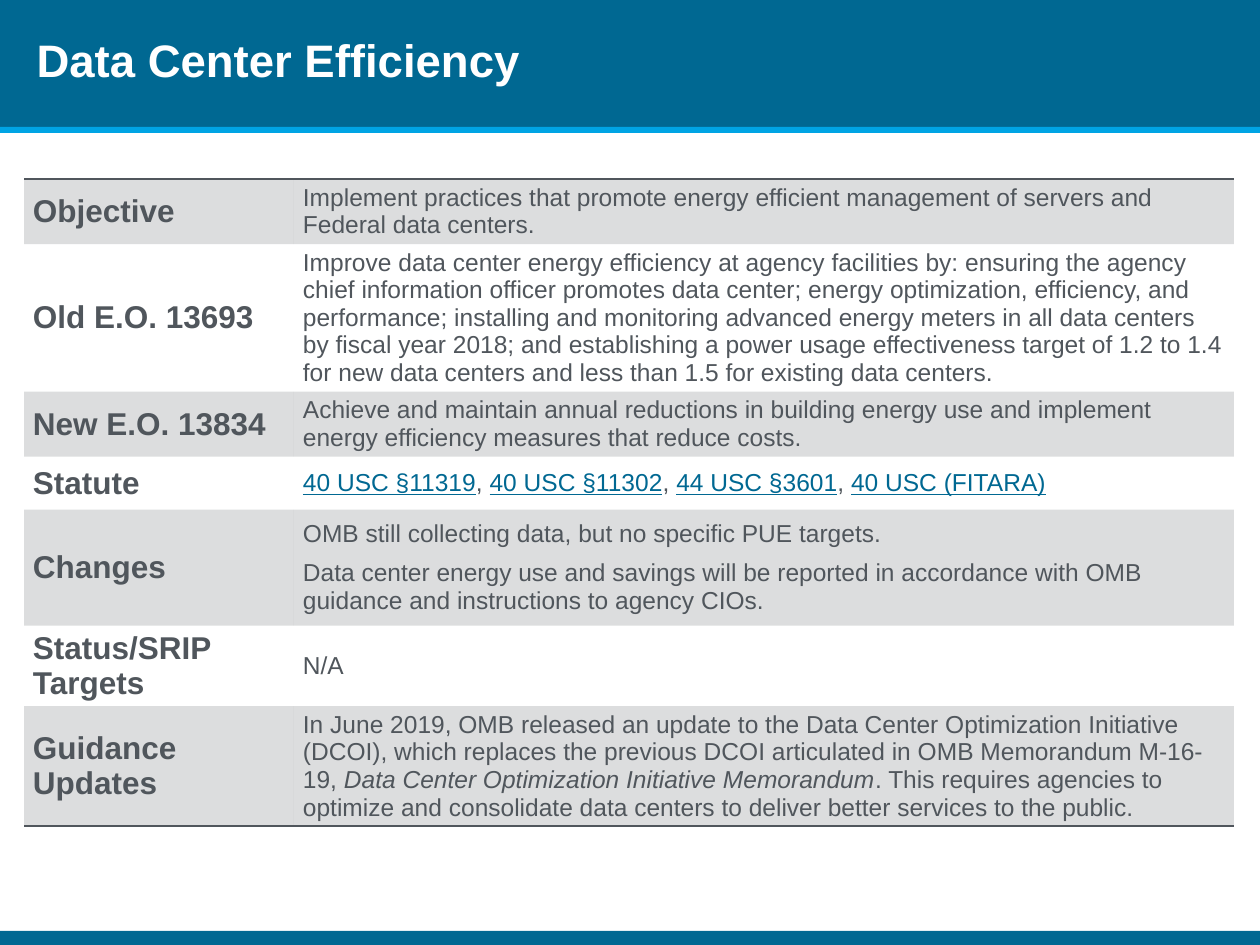
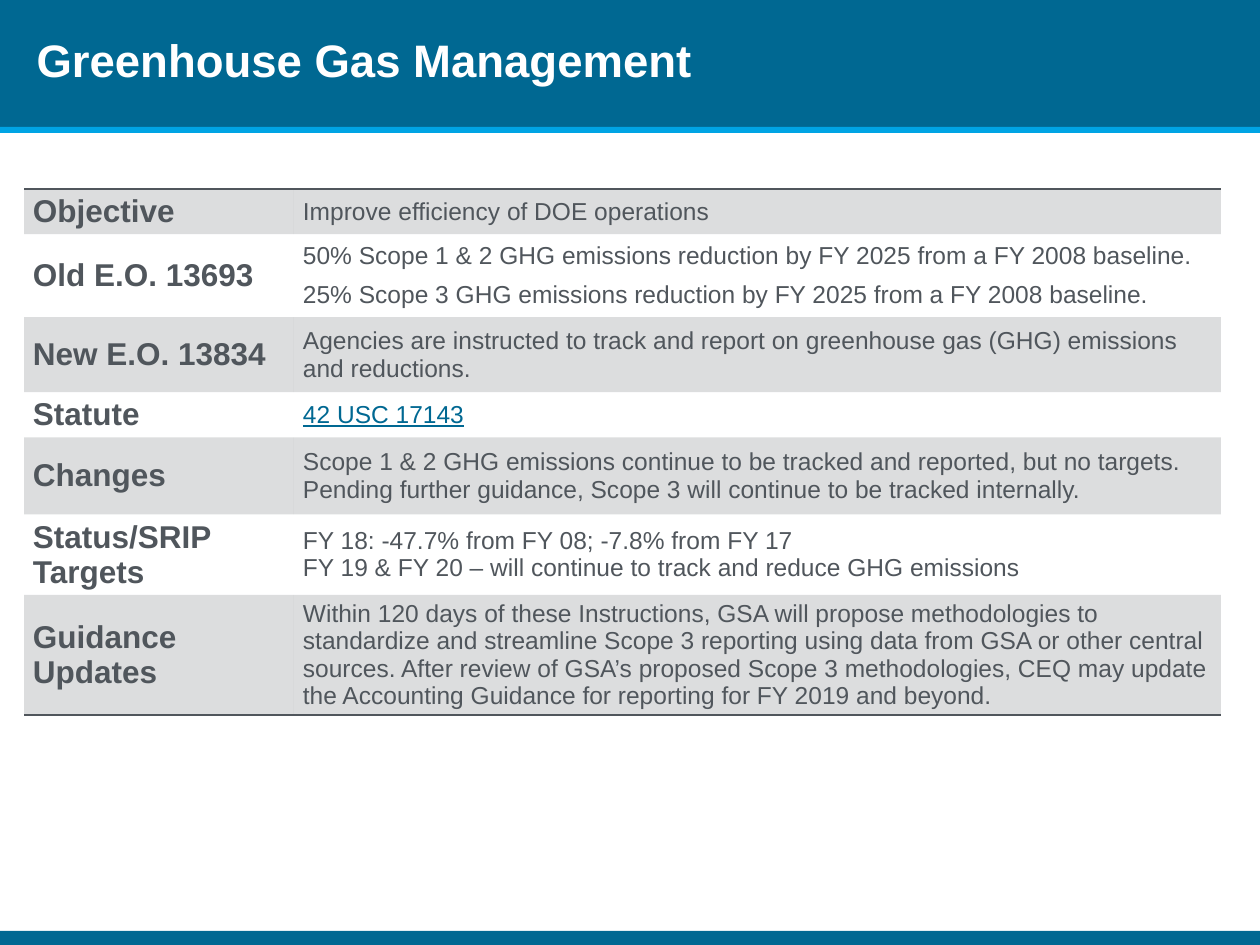
from dataclasses import dataclass
from typing import NamedTuple

import pptx
import pptx.dml.color
import pptx.enum.shapes
import pptx.enum.text
import pptx.oxml
import pptx.oxml.ns
import pptx.util
from lxml import etree

RGB = pptx.dml.color.RGBColor
Pt = pptx.util.Pt
qn = pptx.oxml.ns.qn

BLUE = RGB(0x00, 0x68, 0x92)
SKY = RGB(0x00, 0xA4, 0xE4)
GREY = RGB(0x50, 0x56, 0x5C)
WHITE = RGB(0xFF, 0xFF, 0xFF)

FONT = "Arial"
WIDE, HIGH = 1260, 945
LEFT = 24
LABEL = 270
PLAIN_GRID = "{2D5ABB26-0587-4C30-8999-92F81FD0307C}"


class Band(NamedTuple):
    top: int
    high: int
    fill: RGB


class Bit(NamedTuple):
    text: str
    link: bool = False
    slant: bool = False


@dataclass
class Row:
    label: str
    high: int
    paras: list[list[Bit]]
    gap: float = 0


@dataclass
class Page:
    title: str
    top: int
    wide: int
    rows: list[Row]


BANDS = [Band(0, 127, BLUE), Band(931, 14, BLUE), Band(127, 6, SKY)]


def px(count: int) -> int:
    return round(count * 914400 / 126)


def plain(*lines: str) -> list[list[Bit]]:
    """Paragraphs of one unstyled run each."""
    return [[Bit(line)] for line in lines]


def links(*names: str) -> list[list[Bit]]:
    """One paragraph of link-styled names, parted by commas."""
    bits = [Bit(names[0], link=True)]
    for name in names[1:]:
        bits += [Bit(", "), Bit(name, link=True)]
    return [bits]


PAGES = [
    Page("Data Center Efficiency", 179, 940, [
        Row("Objective", 64, plain(
            "Implement practices that promote energy efficient management of "
            "servers and Federal data centers.")),
        Row("Old E.O. 13693", 147, plain(
            "Improve data center energy efficiency at agency facilities by: "
            "ensuring the agency chief information officer promotes data center; "
            "energy optimization, efficiency, and performance; installing and "
            "monitoring advanced energy meters in all data centers by fiscal year "
            "2018; and establishing a power usage effectiveness target of 1.2 to "
            "1.4 for new data centers and less than 1.5 for existing data centers.")),
        Row("New E.O. 13834", 65, plain(
            "Achieve and maintain annual reductions in building energy use and "
            "implement energy efficiency measures that reduce costs.")),
        Row("Statute", 53, links("40 USC §11319", "40 USC §11302",
                                 "44 USC §3601", "40 USC (FITARA)")),
        Row("Changes", 116, plain(
            "OMB still collecting data, but no specific PUE targets.",
            "Data center energy use and savings will be reported in accordance "
            "with OMB guidance and instructions to agency CIOs."), 6.5),
        Row("Status/SRIP Targets", 80, plain("N/A")),
        Row("Guidance Updates", 120, [[
            Bit("In June 2019, OMB released an update to the Data Center "
                "Optimization Initiative (DCOI), which replaces the previous DCOI "
                "articulated in OMB Memorandum M-16-19, "),
            Bit("Data Center Optimization Initiative Memorandum", slant=True),
            Bit(". This requires agencies to optimize and consolidate data centers "
                "to deliver better services to the public.")]]),
    ]),
    Page("Greenhouse Gas Management", 189, 927, [
        Row("Objective", 45, plain("Improve efficiency of DOE operations")),
        Row("Old E.O. 13693", 83, plain(
            "50% Scope 1 & 2 GHG emissions reduction by FY 2025 from a FY 2008 baseline.",
            "25% Scope 3 GHG emissions reduction by FY 2025 from a FY 2008 baseline."),
            6.5),
        Row("New E.O. 13834", 75, plain(
            "Agencies are instructed to track and report on greenhouse gas (GHG) "
            "emissions and reductions.")),
        Row("Statute", 45, links("42 USC 17143")),
        Row("Changes", 77, plain(
            "Scope 1 & 2 GHG emissions continue to be tracked and reported, but no targets.",
            "Pending further guidance, Scope 3 will continue to be tracked internally.")),
        Row("Status/SRIP Targets", 80, plain(
            "FY 18: -47.7% from FY 08; -7.8% from FY 17",
            "FY 19 & FY 20 – will continue to track and reduce GHG emissions")),
        Row("Guidance Updates", 120, plain(
            "Within 120 days of these Instructions, GSA will propose methodologies "
            "to standardize and streamline Scope 3 reporting using data from GSA or "
            "other central sources. After review of GSA’s proposed Scope 3 "
            "methodologies, CEQ may update the Accounting Guidance for reporting "
            "for FY 2019 and beyond.")),
    ]),
]


def style(font, size: int, color: RGB, bold: bool = False) -> None:
    font.name, font.size, font.bold = FONT, Pt(size), bold
    font.color.rgb = color


def draw_band(slide, band: Band) -> None:
    shape = slide.shapes.add_shape(
        pptx.enum.shapes.MSO_SHAPE.RECTANGLE,
        0, px(band.top), px(WIDE), px(band.high))
    shape.shadow.inherit = False
    shape.fill.solid()
    shape.fill.fore_color.rgb = band.fill
    shape.line.fill.background()


def draw_title(slide, text: str) -> None:
    title = slide.shapes.title
    title.left, title.top, title.width, title.height = (
        px(LEFT), 0, px(780), px(125))
    frame = title.text_frame
    frame.text = text
    frame.word_wrap = True
    frame.auto_size = pptx.enum.text.MSO_AUTO_SIZE.NONE
    frame.vertical_anchor = pptx.enum.text.MSO_ANCHOR.MIDDLE
    para = frame.paragraphs[0]
    para.alignment = pptx.enum.text.PP_ALIGN.LEFT
    para.line_spacing = Pt(28)
    style(para.runs[0].font, 26, WHITE, True)
    # The title has to lie above the bands.
    slide.shapes.element.append(title.element)


def shade(cell) -> None:
    """Fill a cell with grey at 20% opacity."""
    cell.fill.solid()
    cell.fill.fore_color.rgb = GREY
    for color in cell.fill.fore_color._xFill.iter(qn("a:srgbClr")):
        etree.SubElement(color, qn("a:alpha"), val="20000")


def rule(cell, side: str) -> None:
    """Draw a 1 pt edge; side is T or B."""
    space = pptx.oxml.ns.nsdecls("a")
    line = pptx.oxml.parse_xml(
        f'<a:ln{side} {space} w="12700"><a:solidFill>'
        f'<a:srgbClr val="{GREY}"/></a:solidFill></a:ln{side}>')
    cell._tc.get_or_add_tcPr().insert(0, line)


def fill_text(cell, row: Row) -> None:
    frame = cell.text_frame
    for index, bits in enumerate(row.paras):
        para = frame.add_paragraph() if index else frame.paragraphs[0]
        if index:
            para.space_before = Pt(row.gap)
        for bit in bits:
            run = para.add_run()
            run.text = bit.text
            style(run.font, 14, BLUE if bit.link else GREY)
            run.font.underline = bit.link
            run.font.italic = bit.slant


def draw_table(slide, page: Page) -> None:
    rows = page.rows
    frame = slide.shapes.add_table(
        len(rows), 2, px(LEFT), px(page.top), px(LABEL + page.wide),
        px(sum(row.high for row in rows)))
    table = frame.table
    table.first_row = table.horz_banding = False
    for mark in frame.element.iter(qn("a:tableStyleId")):
        mark.text = PLAIN_GRID
    for column, wide in zip(table.columns, (LABEL, page.wide)):
        column.width = px(wide)
    for index, row in enumerate(rows):
        table.rows[index].height = px(row.high)
        label, body = table.rows[index].cells
        label.text_frame.text = row.label
        style(label.text_frame.paragraphs[0].runs[0].font, 18, GREY, True)
        fill_text(body, row)
        for cell in (label, body):
            cell.vertical_anchor = pptx.enum.text.MSO_ANCHOR.MIDDLE
            cell.margin_left = cell.margin_right = px(9)
            cell.margin_top = cell.margin_bottom = px(5)
            if index % 2:
                cell.fill.background()
            else:
                shade(cell)
            if index == 0:
                rule(cell, "T")
            if index == len(rows) - 1:
                rule(cell, "B")


def main() -> None:
    deck = pptx.Presentation()
    deck.slide_width, deck.slide_height = px(WIDE), px(HIGH)
    for page in PAGES:
        slide = deck.slides.add_slide(deck.slide_layouts[5])
        for band in BANDS:
            draw_band(slide, band)
        draw_table(slide, page)
        draw_title(slide, page.title)
    deck.save("out.pptx")


if __name__ == "__main__":
    main()
